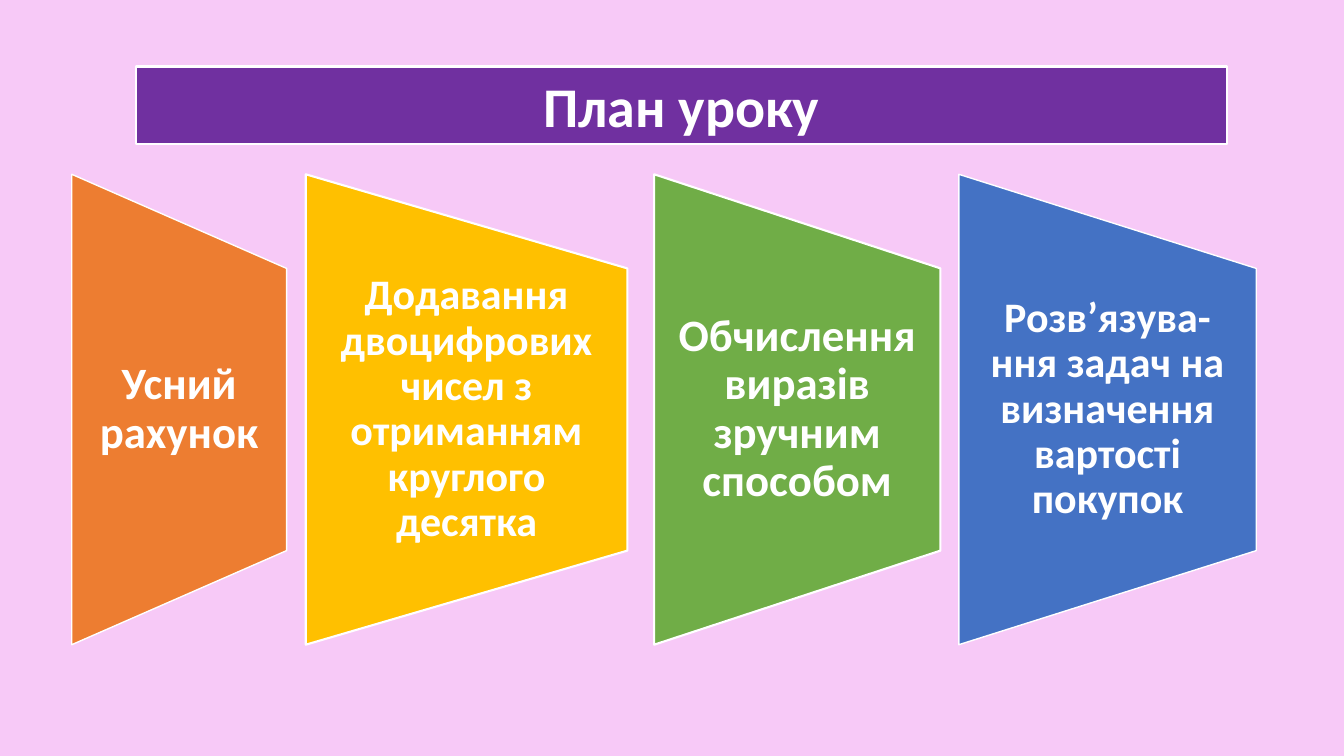
import pptx
import pptx.util
import pptx.dml.color
import pptx.enum.shapes
import pptx.enum.text
from dataclasses import dataclass

Pt = pptx.util.Pt
Shape = pptx.enum.shapes.MSO_SHAPE
Anchor = pptx.enum.text.MSO_ANCHOR
AutoSize = pptx.enum.text.MSO_AUTO_SIZE
Align = pptx.enum.text.PP_ALIGN


def rgb(value):
    return pptx.dml.color.RGBColor.from_string(value)


def apply_formats(target, formats):
    for name, value in formats.items():
        setattr(target, name, value)


@dataclass(frozen=True)
class Theme:
    font: str = "Calibri"
    page: str = "F7C9F7"
    title: str = "7030A0"
    white: str = "FFFFFF"
    orange: str = "ED7D31"
    yellow: str = "FFC000"
    green: str = "70AD47"
    blue: str = "4472C4"
    title_size: int = 40
    large_size: int = 32
    small_size: int = 30


class LessonSlide:
    def __init__(self, deck, theme):
        self.theme = theme
        self.page = deck.slides.add_slide(deck.slide_layouts[6])
        self.page.background.fill.solid()
        self.page.background.fill.fore_color.rgb = rgb(theme.page)

    def add_box(self, kind, left, top, width, height, color, line_width):
        box = self.page.shapes.add_shape(kind, Pt(left), Pt(top), Pt(width), Pt(height))
        box.shadow.inherit = False
        box.fill.solid()
        box.fill.fore_color.rgb = rgb(color)
        box.line.color.rgb = rgb(self.theme.white)
        box.line.width = Pt(line_width)
        return box

    def add_words(self, box, text, size, frame_formats, para_formats):
        apply_formats(
            box.text_frame,
            {"word_wrap": True, "vertical_anchor": Anchor.MIDDLE, **frame_formats},
        )
        para = box.text_frame.paragraphs[0]
        apply_formats(para, {"alignment": Align.CENTER, **para_formats})
        span = para.add_run()
        span.text = text
        apply_formats(span.font, {"name": self.theme.font, "size": Pt(size), "bold": True})
        span.font.color.rgb = rgb(self.theme.white)

    def add_title(self, text, left, top, width, height):
        box = self.add_box(Shape.RECTANGLE, left, top, width, height, self.theme.title, 1.5)
        self.add_words(
            box, text, self.theme.title_size, {"auto_size": AutoSize.SHAPE_TO_FIT_TEXT}, {}
        )

    def add_panel(self, text, left, width, color, size, line_width):
        middle, length, text_height = 292.5, 336, 201.6
        box = self.add_box(
            Shape.FLOWCHART_MANUAL_OPERATION,
            left + (width - length) / 2, middle - width / 2,
            length, width, color, line_width,
        )
        box.rotation = 270
        label = self.page.shapes.add_textbox(
            Pt(left), Pt(middle - text_height / 2), Pt(width), Pt(text_height)
        )
        inset = Pt(size / 2)
        margins = {"margin_left": inset, "margin_right": inset, "margin_top": 0, "margin_bottom": 0}
        self.add_words(label, text, size, margins, {"line_spacing": 0.9})


def main():
    deck = pptx.Presentation()
    apply_formats(deck, {"slide_width": Pt(960), "slide_height": Pt(540)})
    theme = Theme()
    slide = LessonSlide(deck, theme)
    slide.add_title("План уроку", 97.2, 47.5, 779, 55.4)
    panels = [
        ("Усний рахунок", 51.3, 153.4, theme.orange, theme.large_size, 1),
        ("Додавання двоцифрових чисел з отриманням круглого десятка",
         218.4, 229.7, theme.yellow, theme.small_size, 1.5),
        ("Обчислення виразів зручним способом", 467.3, 204.5, theme.green, theme.large_size, 1.5),
        ("Розв’язува-ння задач на визначення вартості покупок",
         684.9, 212.4, theme.blue, theme.small_size, 1),
    ]
    for panel in panels:
        slide.add_panel(*panel)
    deck.save("out.pptx")


if __name__ == "__main__":
    main()
